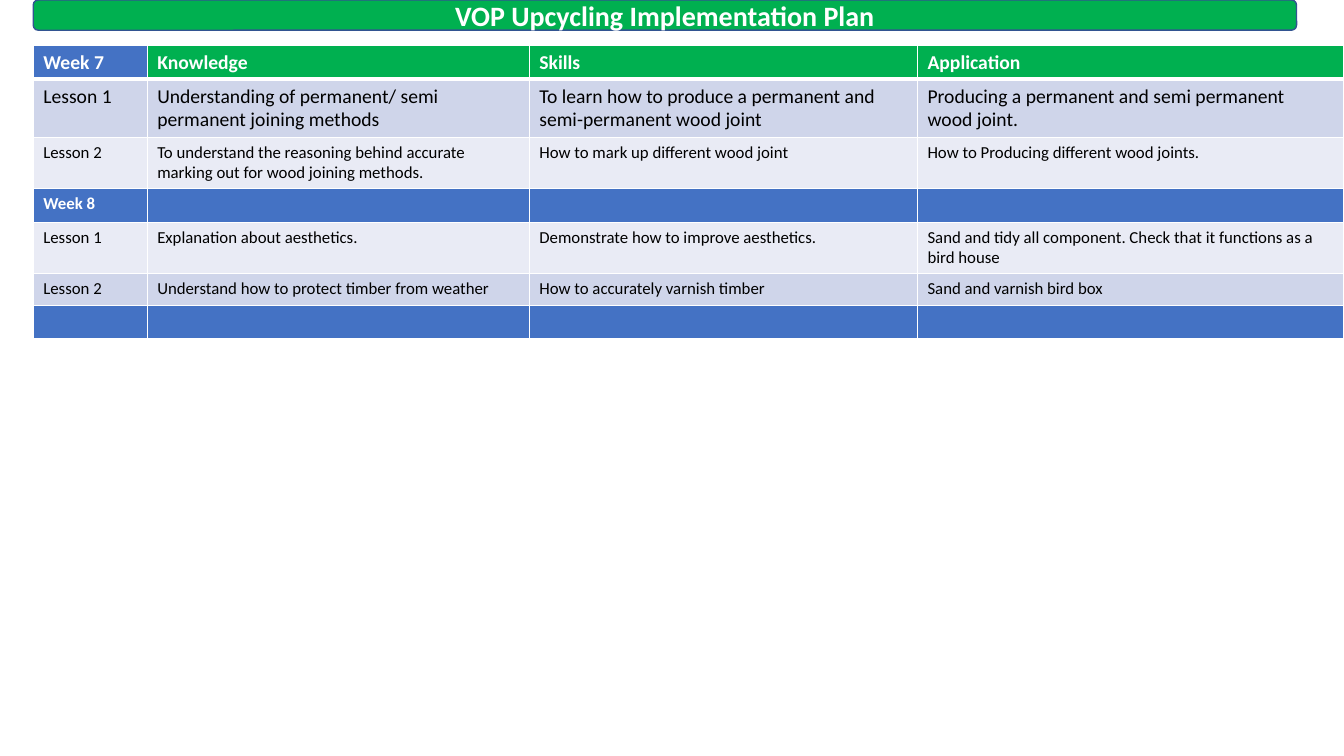
from lxml.etree import SubElement
from pptx import Presentation
from pptx.dml.color import RGBColor
from pptx.enum.shapes import MSO_SHAPE
from pptx.enum.text import MSO_ANCHOR, PP_ALIGN
from pptx.oxml.ns import qn
from pptx.util import Inches, Pt

# Content
TITLE = "VOP Upcycling Implementation Plan"
BLUE, GREEN, WHITE, BLACK = "4472C4", "00B050", "FFFFFF", "000000"
DARK_BAND, LIGHT_BAND = "CFD5EA", "E9EBF5"
EMPTY = ("", "", "")

# Each row: height, text size, fill, cell texts
ROWS = [
    (0.33, 14, GREEN, ("Week 7", "Knowledge", "Skills", "Application")),
    (0.30, 14, DARK_BAND, (
        "Lesson 1",
        "Understanding of permanent/ semi permanent joining methods",
        "To learn how to produce a permanent and semi-permanent wood joint",
        "Producing a permanent and semi permanent wood joint.")),
    (0.31, 12, LIGHT_BAND, (
        "Lesson 2",
        "To understand the reasoning behind accurate marking out for wood joining methods.",
        "How to mark up different wood joint",
        "How to Producing different wood joints.")),
    (0.34, 12, BLUE, ("Week 8", *EMPTY)),
    (0.30, 12, LIGHT_BAND, (
        "Lesson 1",
        "Explanation about aesthetics.",
        "Demonstrate how to improve aesthetics.",
        "Sand and tidy all component. Check that it functions as a bird house")),
    (0.32, 12, DARK_BAND, (
        "Lesson 2",
        "Understand how to protect timber from weather",
        "How to accurately varnish timber",
        "Sand and varnish bird box")),
    (0.33, 12, BLUE, ("", *EMPTY)),
]
COLUMN_WIDTHS = (1.13, 3.79, 3.85, 4.23)
LEFT, TABLE_TOP = 0.33, 0.45
BANNER_WIDTH, BANNER_HEIGHT = 12.53, 0.3


def color(hex_string):
    return RGBColor.from_string(hex_string)


def paint(target, hex_string):
    target.fill.solid()
    target.fill.fore_color.rgb = color(hex_string)


def format_text(paragraph, size, hex_string, bold):
    font = paragraph.font
    font.name, font.size, font.bold = "Calibri", Pt(size), bold
    font.color.rgb = color(hex_string)


def add_borders(cell, bottom_width):
    """Draw white borders; they must precede the cell's fill in the XML."""
    properties = cell._tc.get_or_add_tcPr()
    for side, width in (("L", 1), ("R", 1), ("T", 1), ("B", bottom_width)):
        line = SubElement(properties, qn(f"a:ln{side}"), w=str(Pt(width)))
        fill = SubElement(line, qn("a:solidFill"))
        SubElement(fill, qn("a:srgbClr"), val=WHITE)


presentation = Presentation()
presentation.slide_width, presentation.slide_height = Inches(13.33), Inches(7.5)
slide = presentation.slides.add_slide(presentation.slide_layouts[6])

# Lesson table
table = slide.shapes.add_table(
    len(ROWS), len(COLUMN_WIDTHS), Inches(LEFT), Inches(TABLE_TOP),
    Inches(sum(COLUMN_WIDTHS)), Inches(sum(row[0] for row in ROWS))).table
table.first_row = table.horz_banding = False
for column, width in zip(table.columns, COLUMN_WIDTHS):
    column.width = Inches(width)

for row_index, (height, size, row_fill, texts) in enumerate(ROWS):
    table.rows[row_index].height = Inches(height)
    is_heading = row_fill in (BLUE, GREEN)
    for column_index, text in enumerate(texts):
        cell = table.cell(row_index, column_index)
        add_borders(cell, 3 if row_index == 0 else 1)
        paint(cell, BLUE if is_heading and column_index == 0 else row_fill)
        paragraph = cell.text_frame.paragraphs[0]
        if text:
            cell.text = text
            paragraph = cell.text_frame.paragraphs[0]
        else:
            # An empty cell keeps its row low through the end-of-paragraph size
            SubElement(paragraph._p, qn("a:endParaRPr"), sz=str(size * 100))
        format_text(paragraph, size, WHITE if is_heading else BLACK, is_heading)

# Title banner
banner = slide.shapes.add_shape(
    MSO_SHAPE.ROUNDED_RECTANGLE, Inches(LEFT), 0,
    Inches(BANNER_WIDTH), Inches(BANNER_HEIGHT))
banner.shadow.inherit = False
paint(banner, GREEN)
banner.line.color.rgb = color("325491")
banner.line.width = Pt(1)
banner.text_frame.text = TITLE
banner.text_frame.word_wrap = True
banner.text_frame.vertical_anchor = MSO_ANCHOR.MIDDLE
heading = banner.text_frame.paragraphs[0]
heading.alignment = PP_ALIGN.CENTER
format_text(heading, 20, WHITE, True)

presentation.save("out.pptx")
